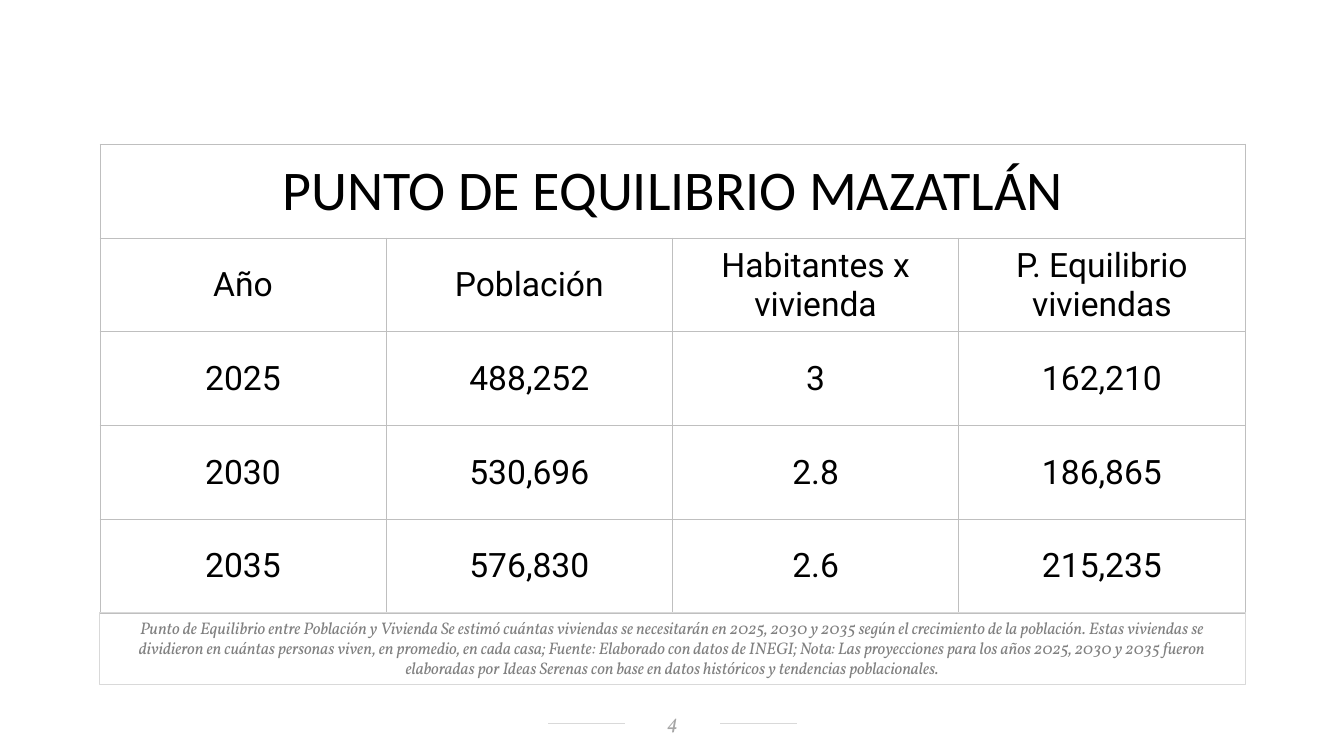
import pptx
import pptx.dml.color
import pptx.enum.shapes
import pptx.enum.text
import pptx.oxml.ns
import pptx.util
from lxml import etree

Inches, Pt = pptx.util.Inches, pptx.util.Pt
COLORS = {
    "paper": "FFFFFF",
    "ink": "000000",
    "grid": "BFBFBF",
    "rule": "D9D9D9",
    "note": "808080",
    "number": "A6A6A6",
}
TABLE_TITLE = "PUNTO DE EQUILIBRIO MAZATLÁN"
ROWS = [
    ["Año", "Población", "Habitantes x vivienda", "P. Equilibrio viviendas"],
    ["2025", "488,252", "3", "162,210"],
    ["2030", "530,696", "2.8", "186,865"],
    ["2035", "576,830", "2.6", "215,235"],
]
NOTE = (
    "Punto de Equilibrio entre Población y Vivienda Se estimó cuántas viviendas "
    "se necesitarán en 2025, 2030 y 2035 según el crecimiento de la población. "
    "Estas viviendas se dividieron en cuántas personas viven, en promedio, en cada "
    "casa; Fuente: Elaborado con datos de INEGI; Nota: Las proyecciones para los "
    "años 2025, 2030 y 2035 fueron elaboradas por Ideas Serenas con base en datos "
    "históricos y tendencias poblacionales."
)
LEFT, TOP = 0.99, 1.43
COLUMN, ROW = 2.84, 0.93
COLUMN_COUNT, ROW_COUNT = len(ROWS[0]), len(ROWS) + 1
WIDTH = COLUMN * COLUMN_COUNT


def rgb(name):
    return pptx.dml.color.RGBColor.from_string(COLORS[name])


def write_centered(text_frame, text, font_name, size, color, italic=False):
    text_frame.text = text
    paragraph = text_frame.paragraphs[0]
    paragraph.alignment = pptx.enum.text.PP_ALIGN.CENTER
    font = paragraph.runs[0].font
    font.name, font.size, font.italic = font_name, Pt(size), italic
    font.color.rgb = rgb(color)


presentation = pptx.Presentation()
presentation.slide_width, presentation.slide_height = Inches(13.33), Inches(7.5)
slide = presentation.slides.add_slide(presentation.slide_layouts[6])
slide.background.fill.solid()
slide.background.fill.fore_color.rgb = rgb("paper")

# Page number, set over a rule that it interrupts
footer_rule = slide.shapes.add_connector(
    pptx.enum.shapes.MSO_CONNECTOR.STRAIGHT,
    Inches(5.44), Inches(7.18), Inches(7.9), Inches(7.18),
)
footer_rule.line.color.rgb = rgb("rule")
footer_rule.line.width = Pt(1)
etree.SubElement(footer_rule._element.spPr, pptx.oxml.ns.qn("a:effectLst"))

page_number = slide.shapes.add_shape(
    pptx.enum.shapes.MSO_SHAPE.RECTANGLE,
    Inches(6.2), Inches(7.04), Inches(0.94), Inches(0.25),
)
page_number.shadow.inherit = False
page_number.fill.solid()
page_number.fill.fore_color.rgb = rgb("paper")
page_number.line.fill.background()
number_frame = page_number.text_frame
number_frame.margin_left, number_frame.margin_right = Inches(0.1), Inches(0.09)
number_frame.margin_top, number_frame.margin_bottom = Inches(0.02), Inches(0.05)
number_frame.vertical_anchor = pptx.enum.text.MSO_ANCHOR.MIDDLE
write_centered(number_frame, "4", "Vollkorn", 14.7, "number", italic=True)

# Table
table = slide.shapes.add_table(
    ROW_COUNT, COLUMN_COUNT,
    Inches(LEFT), Inches(TOP), Inches(WIDTH), Inches(ROW * ROW_COUNT),
).table
table.first_row = table.horz_banding = False
for cell in table.iter_cells():
    cell.margin_left = cell.margin_right = cell.margin_top = Inches(0.01)
    cell.margin_bottom = 0
    cell.vertical_anchor = pptx.enum.text.MSO_ANCHOR.MIDDLE
    properties = cell._tc.get_or_add_tcPr()
    for side in ("a:lnL", "a:lnR", "a:lnT", "a:lnB"):
        border = etree.SubElement(properties, pptx.oxml.ns.qn(side), w=str(Pt(0.5)))
        solid = etree.SubElement(border, pptx.oxml.ns.qn("a:solidFill"))
        etree.SubElement(solid, pptx.oxml.ns.qn("a:srgbClr"), val=COLORS["grid"])
    cell.fill.background()

table.cell(0, 0).merge(table.cell(0, COLUMN_COUNT - 1))
write_centered(table.cell(0, 0).text_frame, TABLE_TITLE, "Calibri", 40, "ink")
for row_index, row in enumerate(ROWS, start=1):
    for column_index, value in enumerate(row):
        cell = table.cell(row_index, column_index)
        write_centered(cell.text_frame, value, "Roboto", 24, "ink")

# Source note directly below the table
note = slide.shapes.add_textbox(
    Inches(LEFT), Inches(TOP + ROW * ROW_COUNT), Inches(WIDTH), Inches(0.71)
)
note.line.color.rgb = rgb("rule")
note.line.width = Pt(0.75)
note.text_frame.word_wrap = True
note.text_frame.auto_size = pptx.enum.text.MSO_AUTO_SIZE.SHAPE_TO_FIT_TEXT
write_centered(note.text_frame, NOTE, "Vollkorn", 12, "note", italic=True)

presentation.save("out.pptx")
